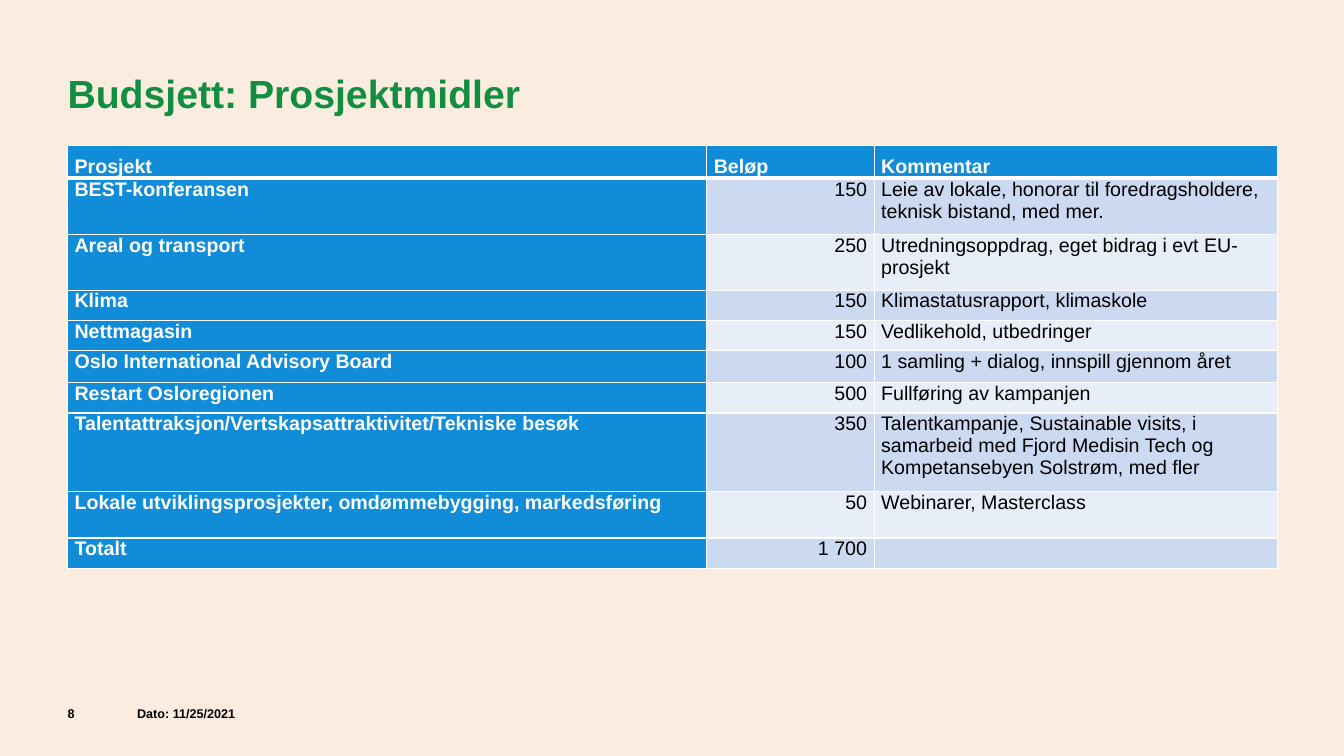
from lxml.etree import SubElement
from pptx import Presentation
from pptx.dml.color import RGBColor
from pptx.enum.text import MSO_ANCHOR, PP_ALIGN
from pptx.oxml.ns import qn
from pptx.util import Inches, Pt

COLORS = {
    "background": "FAEDE0",
    "title": "128E41",
    "header": "118CD9",
    "odd": "CCDAF1",
    "even": "E7EEF8",
    "white": "FFFFFF",
    "black": "000000",
}
HEADINGS = ("Prosjekt", "Beløp", "Kommentar")
PROJECTS = [
    ("BEST-konferansen", "150",
     "Leie av lokale, honorar til foredragsholdere, teknisk bistand, med mer."),
    ("Areal og transport", "250", "Utredningsoppdrag, eget bidrag i evt EU-prosjekt"),
    ("Klima", "150", "Klimastatusrapport, klimaskole"),
    ("Nettmagasin", "150", "Vedlikehold, utbedringer"),
    ("Oslo International Advisory Board", "100", "1 samling + dialog, innspill gjennom året"),
    ("Restart Osloregionen", "500", "Fullføring av kampanjen"),
    ("Talentattraksjon/Vertskapsattraktivitet/Tekniske besøk", "350",
     "Talentkampanje, Sustainable visits, i samarbeid med Fjord Medisin Tech og "
     "Kompetansebyen Solstrøm, med fler"),
    ("Lokale utviklingsprosjekter, omdømmebygging, markedsføring", "50",
     "Webinarer, Masterclass"),
    ("Totalt", "1 700", ""),
]
COLUMN_WIDTHS = (6.34, 1.66, 4)
ROW_HEIGHTS = (0.3, 0.56, 0.55, 0.3, 0.3, 0.32, 0.3, 0.78, 0.46, 0.3)


class BudgetSlide:
    font_name = "Arial"

    def __init__(self, presentation):
        self.slide = presentation.slides.add_slide(presentation.slide_layouts[5])
        fill = self.slide.background.fill
        fill.solid()
        fill.fore_color.rgb = self.color("background")

    def color(self, name):
        return RGBColor.from_string(COLORS[name])

    def run(self, paragraph, text, size, color, bold):
        run = paragraph.add_run()
        run.text = text
        run.font.name = self.font_name
        run.font.size = Pt(size)
        run.font.bold = bold
        run.font.color.rgb = self.color(color)

    def fill_line(self, shape, text, size, color):
        frame = shape.text_frame
        frame.word_wrap = True
        frame.vertical_anchor = MSO_ANCHOR.MIDDLE
        frame.margin_left = frame.margin_right = 0
        frame.margin_top = frame.margin_bottom = Inches(0.05)
        paragraph = frame.paragraphs[0]
        paragraph.alignment = PP_ALIGN.LEFT
        self.run(paragraph, text, size, color, True)

    def title(self, text, left, top, width, height):
        heading = self.slide.shapes.title
        heading.left, heading.top = Inches(left), Inches(top)
        heading.width, heading.height = Inches(width), Inches(height)
        self.fill_line(heading, text, 28, "title")

    def footer(self, text, left, width):
        box = self.slide.shapes.add_textbox(
            Inches(left), Inches(6.92), Inches(width), Inches(0.31))
        self.fill_line(box, text, 9, "black")

    def borders(self, cell, bottom):
        properties = cell._tc.get_or_add_tcPr()
        widths = {"a:lnL": 1, "a:lnR": 1, "a:lnT": 1, "a:lnB": bottom}
        for position, (side, width) in enumerate(widths.items()):
            line = SubElement(properties, qn(side), w=str(Pt(width)))
            solid = SubElement(line, qn("a:solidFill"))
            SubElement(solid, qn("a:srgbClr"), val=COLORS["white"])
            properties.insert(position, line)

    def cell(self, cell, text, row, column):
        is_header = row == 0
        is_label = is_header or column == 0
        cell.margin_left = cell.margin_right = Inches(0.07)
        cell.margin_top = cell.margin_bottom = 0
        cell.fill.solid()
        band = "odd" if row % 2 else "even"
        cell.fill.fore_color.rgb = self.color("header" if is_label else band)
        self.borders(cell, 3 if is_header else 1)
        paragraph = cell.text_frame.paragraphs[0]
        if is_header:
            paragraph.line_spacing = 1.5
        elif column == 1:
            paragraph.alignment = PP_ALIGN.RIGHT
        if text:
            self.run(paragraph, text, 14, "white" if is_label else "black", is_label)

    def table(self, rows, left, top):
        budget = self.slide.shapes.add_table(
            len(rows), len(COLUMN_WIDTHS), Inches(left), Inches(top),
            Inches(sum(COLUMN_WIDTHS)), Inches(sum(ROW_HEIGHTS))).table
        for column, width in zip(budget.columns, COLUMN_WIDTHS):
            column.width = Inches(width)
        for row, height in zip(budget.rows, ROW_HEIGHTS):
            row.height = Inches(height)
        for row, texts in enumerate(rows):
            for column, text in enumerate(texts):
                self.cell(budget.cell(row, column), text, row, column)


def main():
    presentation = Presentation()
    presentation.slide_width = Inches(13.33)
    presentation.slide_height = Inches(7.5)
    slide = BudgetSlide(presentation)
    slide.title("Budsjett: Prosjektmidler", 0.67, 0.3, 12, 1.25)
    slide.table([HEADINGS, *PROJECTS], 0.67, 1.44)
    slide.footer("8", 0.67, 0.51)
    slide.footer("Dato: 11/25/2021", 1.36, 1.62)
    presentation.save("out.pptx")


if __name__ == "__main__":
    main()
